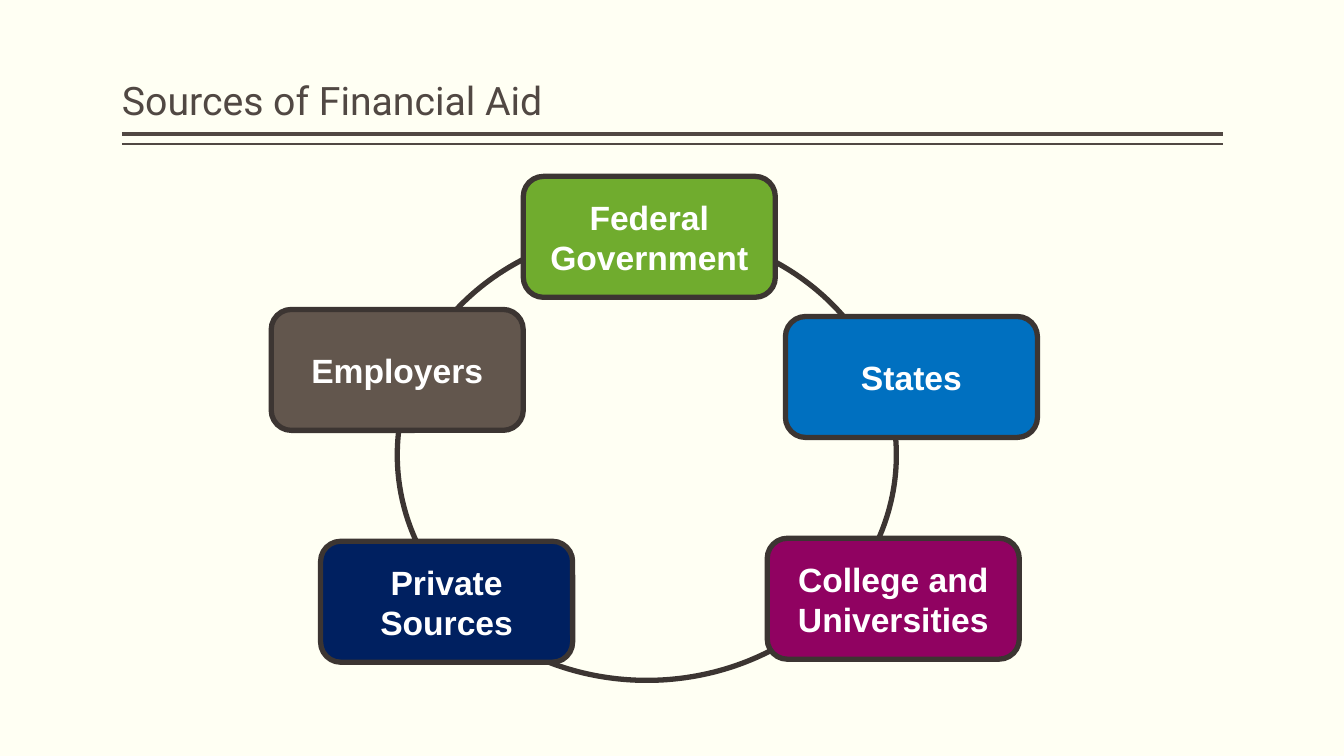
import pptx
import pptx.dml.color
import pptx.enum.shapes
import pptx.enum.text
import pptx.oxml
import pptx.util
from pptx.util import Inches

SOURCES = [
    ("Federal Government", 5.19, 1.75, "70AC2E"),
    ("States", 7.79, 3.14, "0070C0"),
    ("College and Universities", 7.61, 5.34, "900261"),
    ("Private Sources", 3.18, 5.37, "002060"),
    ("Employers", 2.69, 3.07, "62564D"),
]


def color(value):
    return pptx.dml.color.RGBColor.from_string(value)


class FinancialAidPage:
    """Holds the style and the current slide, and draws each kind of element."""

    background = "FFFFF3"
    heading = "514843"
    outline = "3C3532"
    label = "FFFFFF"
    outline_width = 3.78

    def __init__(self, deck):
        self.page = deck.slides.add_slide(deck.slide_layouts[5])
        fill = self.page.background.fill
        fill.solid()
        fill.fore_color.rgb = color(self.background)

    def add_span(self, para, text, font, size, ink, bold=False):
        span = para.add_run()
        span.text = text
        span.font.name = font
        span.font.size = pptx.util.Pt(size)
        span.font.bold = bold
        span.font.color.rgb = color(ink)

    def title(self, text, left, top, width, height):
        box = self.page.shapes.title
        box.left, box.top = Inches(left), Inches(top)
        box.width, box.height = Inches(width), Inches(height)
        frame = box.text_frame
        frame.auto_size = pptx.enum.text.MSO_AUTO_SIZE.NONE
        frame.word_wrap = True
        frame.vertical_anchor = pptx.enum.text.MSO_ANCHOR.BOTTOM
        frame.margin_left = frame.margin_right = 0
        frame.margin_top = frame.margin_bottom = Inches(0.05)
        para = frame.paragraphs[0]
        para.alignment = pptx.enum.text.PP_ALIGN.LEFT
        para.line_spacing = 0.9
        self.add_span(para, text, "Roboto", 28, self.heading)

    def rule(self, left, right, top, width):
        line = self.page.shapes.add_connector(
            pptx.enum.shapes.MSO_CONNECTOR.STRAIGHT,
            Inches(left), Inches(top), Inches(right), Inches(top))
        line.line.color.rgb = color(self.heading)
        line.line.width = pptx.util.Pt(width)
        properties = line._element.spPr
        properties.append(pptx.oxml.parse_xml(
            '<a:effectLst xmlns:a="http://schemas.openxmlformats.org/drawingml/2006/main"/>'))

    def outlined(self, kind, left, top, width, height):
        shape = self.page.shapes.add_shape(
            kind, Inches(left), Inches(top), Inches(width), Inches(height))
        shape.shadow.inherit = False
        shape.line.color.rgb = color(self.outline)
        shape.line.width = pptx.util.Pt(self.outline_width)
        return shape

    def ring(self, left, top, width, height):
        oval = pptx.enum.shapes.MSO_SHAPE.OVAL
        self.outlined(oval, left, top, width, height).fill.background()

    def source(self, text, left, top, fill):
        rounded = pptx.enum.shapes.MSO_SHAPE.ROUNDED_RECTANGLE
        box = self.outlined(rounded, left, top, 2.5, 1.2)
        box.fill.solid()
        box.fill.fore_color.rgb = color(fill)
        frame = box.text_frame
        frame.word_wrap = True
        frame.vertical_anchor = pptx.enum.text.MSO_ANCHOR.MIDDLE
        para = frame.paragraphs[0]
        para.alignment = pptx.enum.text.PP_ALIGN.CENTER
        self.add_span(para, text, "Arial", 24, self.label, bold=True)


def main():
    deck = pptx.Presentation()
    deck.slide_width, deck.slide_height = Inches(13.33), Inches(7.5)
    page = FinancialAidPage(deck)
    page.title("Sources of Financial Aid", 1.21, 0.08, 10.92, 1.2)
    for top, width in ((1.33, 3), (1.43, 1)):
        page.rule(1.21, 12.13, top, width)
    page.ring(3.94, 2.28, 4.95, 4.47)
    for text, left, top, fill in SOURCES:
        page.source(text, left, top, fill)
    deck.save("out.pptx")


if __name__ == "__main__":
    main()
